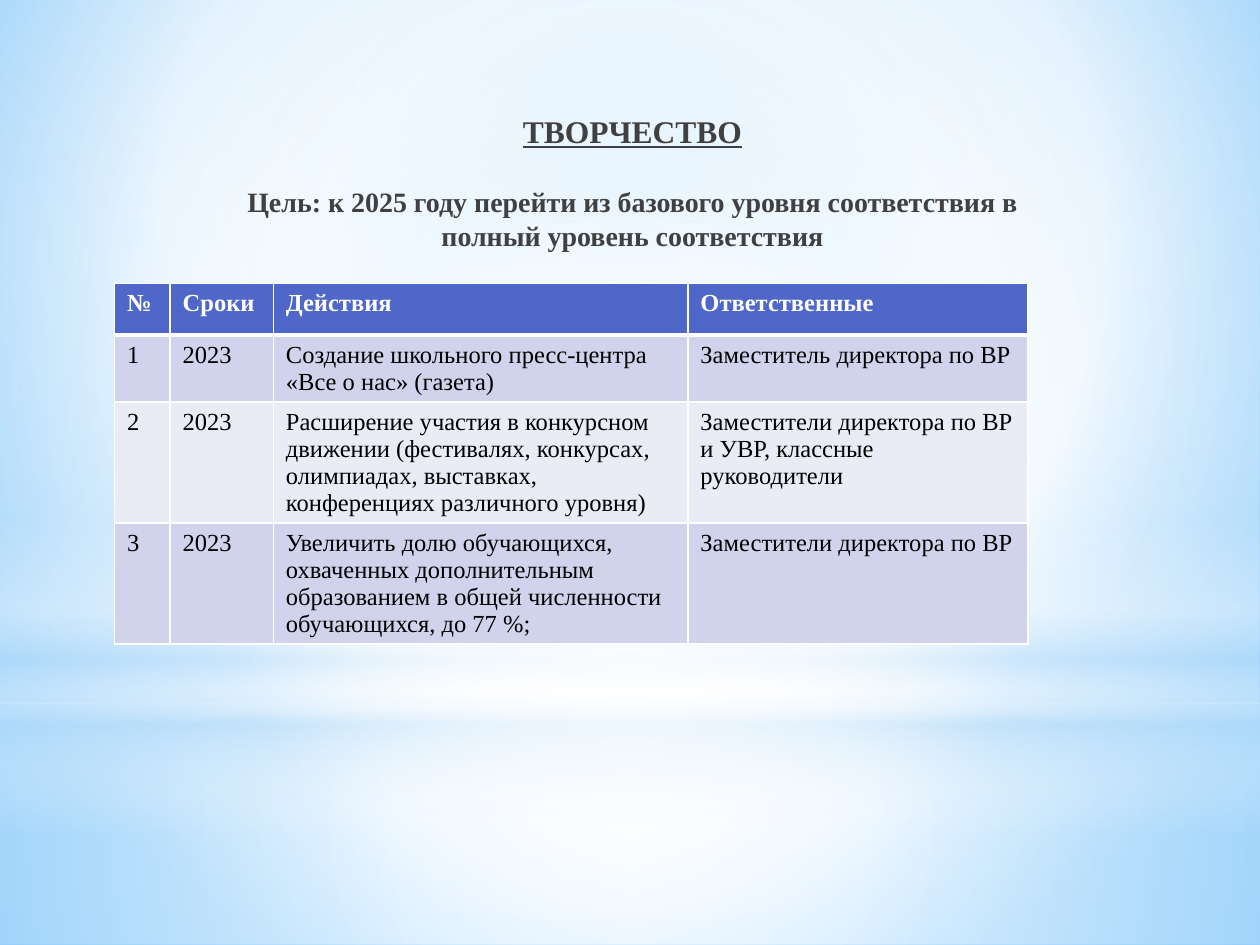
import pptx
import pptx.util
import pptx.dml.color
import pptx.enum.shapes
import pptx.enum.text
import pptx.oxml
import pptx.oxml.ns
from dataclasses import dataclass

Inches = pptx.util.Inches
Pt = pptx.util.Pt
RGB = pptx.dml.color.RGBColor.from_string
MSO = pptx.enum.shapes.MSO_SHAPE
NS = pptx.oxml.ns.nsdecls("a")
qn = pptx.oxml.ns.qn


@dataclass(frozen=True)
class Theme:
    font: str = "Times New Roman"
    title: str = "404040"
    header: str = "4E67C8"
    odd: str = "D0D3EB"
    even: str = "E9EBF5"
    white: str = "FFFFFF"
    black: str = "000000"
    sky: str = "B4DCFA"
    title_pt: int = 18
    goal_pt: int = 16
    table_pt: int = 14


T = Theme()
CENTER = (50, 50, 50, 50)

BACKGROUND = [(0, "9ED5FF", 100), (60, T.white, 100), (100, "5BB9FF", 100)]
FLOOR = [(0, T.white, 91), (37, T.white, 76), (100, T.sky, 79)]
SKY = [(0, T.white, 89), (48, T.white, 62), (100, T.sky, 79)]
HORIZON = [(0, T.white, 0), (29, T.white, 30), (45, T.sky, 40),
           (55, T.white, 26), (65, T.sky, 60), (100, T.white, 0)]
GLOW = [(0, T.white, 100), (56, T.white, 0)]

ROWS = [
    ("№", "Сроки", "Действия", "Ответственные"),
    ("1", "2023", "Создание школьного пресс-центра «Все о нас» (газета)",
     "Заместитель директора по ВР"),
    ("2", "2023", "Расширение участия в конкурсном движении (фестивалях, конкурсах, "
     "олимпиадах, выставках, конференциях различного уровня)",
     "Заместители директора по ВР и УВР, классные руководители"),
    ("3", "2023", "Увеличить долю обучающихся, охваченных дополнительным образованием "
     "в общей численности обучающихся, до 77 %;",
     "Заместители директора по ВР"),
]
COL_WIDTHS = (0.44, 0.82, 3.29, 2.7)
ROW_HEIGHTS = (0.41, 0.53, 0.96, 0.96)


def set_gradient(fill, element, stops, center=None):
    fill.gradient()
    old = element.find(".//" + qn("a:gradFill"))
    gs = "".join(
        f'<a:gs pos="{pos * 1000}"><a:srgbClr val="{color}">'
        f'<a:alpha val="{alpha * 1000}"/></a:srgbClr></a:gs>'
        for pos, color, alpha in stops)
    if center:
        sides = " ".join(f'{k}="{v * 1000}"' for k, v in zip("ltrb", center))
        direction = f'<a:path path="circle"><a:fillToRect {sides}/></a:path>'
    else:
        direction = '<a:lin ang="5400000" scaled="0"/>'
    new = pptx.oxml.parse_xml(
        f'<a:gradFill {NS} rotWithShape="1"><a:gsLst>{gs}</a:gsLst>{direction}</a:gradFill>')
    old.getparent().replace(old, new)


def add_light(s, kind, top, height, stops, center=None):
    sp = s.shapes.add_shape(kind, 0, Inches(top), Inches(10), Inches(height))
    sp.shadow.inherit = False
    sp.line.fill.background()
    set_gradient(sp.fill, sp.element, stops, center)


def style_text(p, size, color, bold):
    p.font.name = T.font
    p.font.size = Pt(size)
    p.font.bold = bold
    p.font.color.rgb = RGB(color)


def add_title(s, heading, goal):
    sp = s.shapes.title
    sp.element.getparent().append(sp.element)
    sp.left, sp.top, sp.width, sp.height = map(Inches, (1.46, 0.84, 7.12, 5.42))
    tf = sp.text_frame
    tf.word_wrap = True
    tf.auto_size = pptx.enum.text.MSO_AUTO_SIZE.NONE
    tf.vertical_anchor = pptx.enum.text.MSO_ANCHOR.TOP
    tf.margin_left = tf.margin_right = Inches(0.2)
    tf.text = f"{heading}\n{goal}"
    for p, size in zip(tf.paragraphs, (T.title_pt, T.goal_pt)):
        p.alignment = pptx.enum.text.PP_ALIGN.CENTER
        style_text(p, size, T.title, True)
    tf.paragraphs[0].font.underline = True
    tf.paragraphs[1].space_before = Pt(20)


def set_borders(cell, top, bottom):
    tc_pr = cell._tc.get_or_add_tcPr()
    for i, (side, width) in enumerate(zip("LRTB", (1, 1, top, bottom))):
        tc_pr.insert(i, pptx.oxml.parse_xml(
            f'<a:ln{side} {NS} w="{Pt(width)}"><a:solidFill>'
            f'<a:srgbClr val="{T.white}"/></a:solidFill></a:ln{side}>'))


def add_plan_table(s):
    table = s.shapes.add_table(
        len(ROWS), len(COL_WIDTHS), Inches(0.91), Inches(2.25),
        Inches(sum(COL_WIDTHS)), Inches(sum(ROW_HEIGHTS))).table
    for col, width in zip(table.columns, COL_WIDTHS):
        col.width = Inches(width)
    for i, (row, height) in enumerate(zip(table.rows, ROW_HEIGHTS)):
        row.height = Inches(height)
        header = i == 0
        fill = T.header if header else (T.odd if i % 2 else T.even)
        for cell, text in zip(row.cells, ROWS[i]):
            cell.text = text
            cell.fill.solid()
            cell.fill.fore_color.rgb = RGB(fill)
            style_text(cell.text_frame.paragraphs[0], T.table_pt,
                       T.white if header else T.black, header)
            set_borders(cell, 3 if i == 1 else 1, 3 if header else 1)


def main():
    prs = pptx.Presentation()
    prs.slide_width, prs.slide_height = Inches(10), Inches(7.5)
    s = prs.slides.add_slide(prs.slide_layouts[5])
    set_gradient(s.background.fill, s.element, BACKGROUND, (20, 10, 20, 60))
    add_light(s, MSO.RECTANGLE, 5.58, 1.92, FLOOR, CENTER)
    add_light(s, MSO.RECTANGLE, 0, 5.58, SKY, CENTER)
    add_light(s, MSO.RECTANGLE, 4.12, 2.5, HORIZON)
    add_light(s, MSO.OVAL, 1.75, 5.58, GLOW, CENTER)
    add_title(s, "ТВОРЧЕСТВО",
              "Цель: к 2025 году перейти из базового уровня соответствия "
              "в полный уровень соответствия")
    add_plan_table(s)
    prs.save("out.pptx")


if __name__ == "__main__":
    main()
